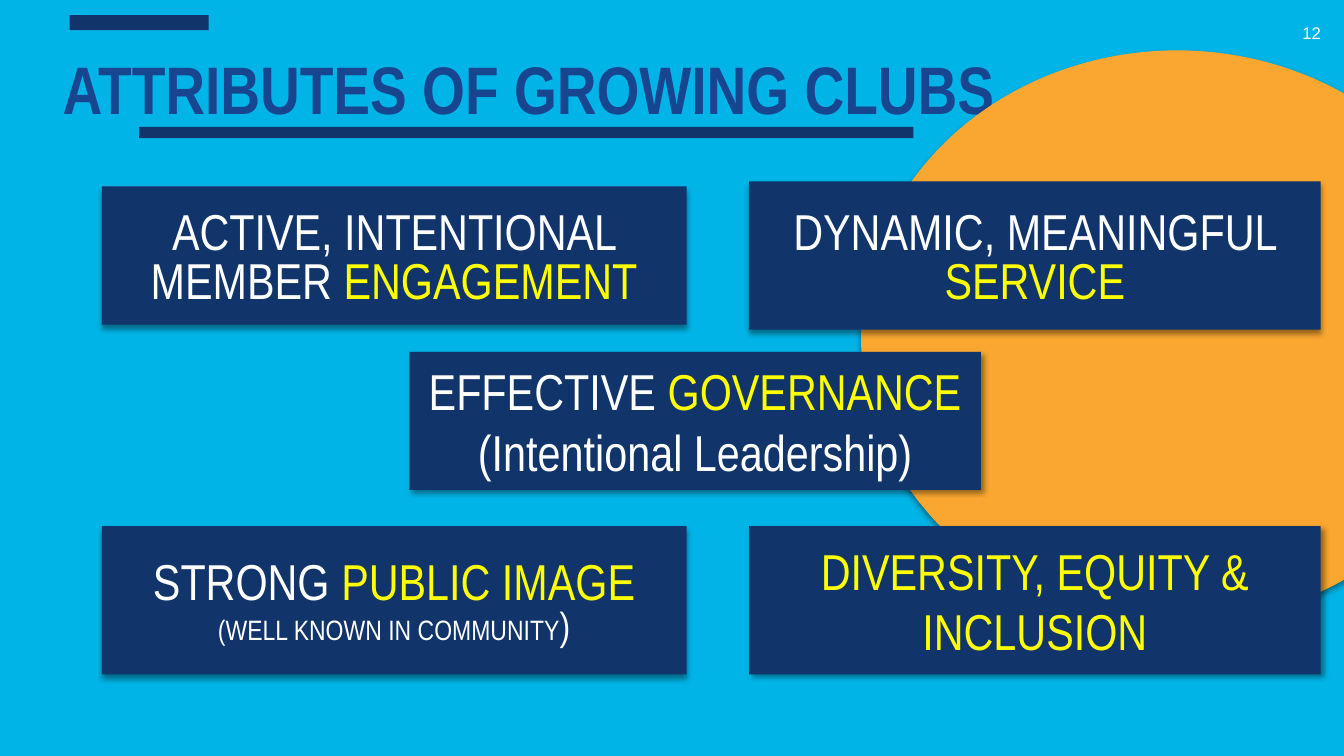
import lxml.etree
import pptx
import pptx.dml.color
import pptx.enum.shapes
import pptx.enum.text
import pptx.oxml.ns
import pptx.util

Inches = pptx.util.Inches
Shape = pptx.enum.shapes.MSO_SHAPE
Align = pptx.enum.text.PP_ALIGN
Anchor = pptx.enum.text.MSO_ANCHOR

SKY, NAVY, BLUE, ORANGE = "01B4E7", "11346B", "17458F", "F9A731"
WHITE, YELLOW = "FFFFFF", "FFFF00"
TIGHT = {"line_spacing": 0.8}
LEFT, RIGHT = (1.01, 5.8), (7.43, 5.67)

# Box (left, top, width, height), shadow angle, paragraph format,
# and paragraphs of (text, colour, size) runs.
CARDS = [
    ((4.06, 3.49, 5.67, 1.37), 45, {},
     [[("EFFECTIVE ", WHITE, 36), ("GOVERNANCE ", YELLOW, 36),
       ("(Intentional Leadership)", WHITE, 36)]]),
    ((LEFT[0], 1.85, LEFT[1], 1.37), 90, TIGHT,
     [[("ACTIVE, INTENTIONAL MEMBER ", WHITE, 36), ("ENGAGEMENT", YELLOW, 36)]]),
    ((RIGHT[0], 1.8, RIGHT[1], 1.47), 90, TIGHT,
     [[("DYNAMIC, MEANINGFUL ", WHITE, 36), ("SERVICE", YELLOW, 36)]]),
    ((LEFT[0], 5.22, LEFT[1], 1.47), 90, TIGHT,
     [[("STRONG ", WHITE, 36), ("PUBLIC IMAGE", YELLOW, 36)],
      [("(WELL KNOWN IN COMMUNITY", WHITE, 20), (")", WHITE, 28)]]),
    ((RIGHT[0], 5.22, RIGHT[1], 1.47), 45, {},
     [[("DIVERSITY, EQUITY & INCLUSION", YELLOW, 36)]]),
]


def rgb(color):
    return pptx.dml.color.RGBColor.from_string(color)


def set_values(target, values):
    for name, value in values.items():
        setattr(target, name, value)


def add_span(para, text, color, size, font="Arial Narrow", bold=False):
    span = para.add_run()
    span.text = text
    set_values(span.font, {"name": font, "size": pptx.util.Pt(size), "bold": bold})
    span.font.color.rgb = rgb(color)


def add_block(slide, kind, box, color):
    block = slide.shapes.add_shape(kind, *map(Inches, box))
    block.shadow.inherit = False
    block.fill.solid()
    block.fill.fore_color.rgb = rgb(color)
    block.line.fill.background()
    return block


def add_shadow(shape, angle):
    """Give the shape a soft black shadow falling at the angle in degrees."""
    qn = pptx.oxml.ns.qn
    effects = shape._element.spPr.find(qn("a:effectLst"))
    shadow = lxml.etree.SubElement(
        effects, qn("a:outerShdw"), blurRad=str(pptx.util.Pt(4)),
        dist=str(pptx.util.Pt(3)), dir=str(angle * 60000), rotWithShape="0")
    black = lxml.etree.SubElement(shadow, qn("a:srgbClr"), val="000000")
    lxml.etree.SubElement(black, qn("a:alpha"), val="40000")


def add_title(slide, box):
    left, top, width, height = box
    title = slide.shapes.title
    set_values(title, {"left": Inches(left), "top": Inches(top),
                       "width": Inches(width), "height": Inches(height)})
    set_values(title.text_frame, {"vertical_anchor": Anchor.MIDDLE, "word_wrap": True,
                                  "auto_size": pptx.enum.text.MSO_AUTO_SIZE.NONE})
    para = title.text_frame.paragraphs[0]
    para.alignment = Align.LEFT
    add_span(para, "ATTRIBUTES OF GROWING CLUBS", BLUE, 48, bold=True)
    add_block(slide, Shape.RECTANGLE, (left + 0.17, top - 0.32, 1.38, 0.15), NAVY)
    add_block(slide, Shape.RECTANGLE, (left + 0.86, top + 0.79, 7.68, 0.11), NAVY)


def add_card(slide, box, angle, para_format, paragraphs):
    card = add_block(slide, Shape.RECTANGLE, box, NAVY)
    add_shadow(card, angle)
    frame = card.text_frame
    set_values(frame, {"word_wrap": True, "vertical_anchor": Anchor.MIDDLE})
    if para_format:
        frame.margin_top = Inches(0.15)
    for index, spans in enumerate(paragraphs):
        para = frame.add_paragraph() if index else frame.paragraphs[0]
        set_values(para, {"alignment": Align.CENTER, **para_format})
        for span in spans:
            add_span(para, *span)


def add_page_number(slide, box):
    frame = slide.shapes.add_textbox(*map(Inches, box)).text_frame
    set_values(frame, {"word_wrap": True, "vertical_anchor": Anchor.MIDDLE})
    para = frame.paragraphs[0]
    para.alignment = Align.RIGHT
    add_span(para, "12", WHITE, 12, font="Arial")


def main():
    deck = pptx.Presentation()
    set_values(deck, {"slide_width": Inches(13.33), "slide_height": Inches(7.5)})
    slide = deck.slides.add_slide(deck.slide_layouts.get_by_name("Title Only"))
    slide.background.fill.solid()
    slide.background.fill.fore_color.rgb = rgb(SKY)

    add_title(slide, (0.52, 0.47, 10.17, 0.8))
    circle = add_block(slide, Shape.OVAL, (8.54, 0.5, 6.27, 5.68), ORANGE)
    add_shadow(circle, 90)
    for card in CARDS:
        add_card(slide, *card)
    add_page_number(slide, (12.74, 0.13, 0.46, 0.4))
    deck.save("out.pptx")


if __name__ == "__main__":
    main()
